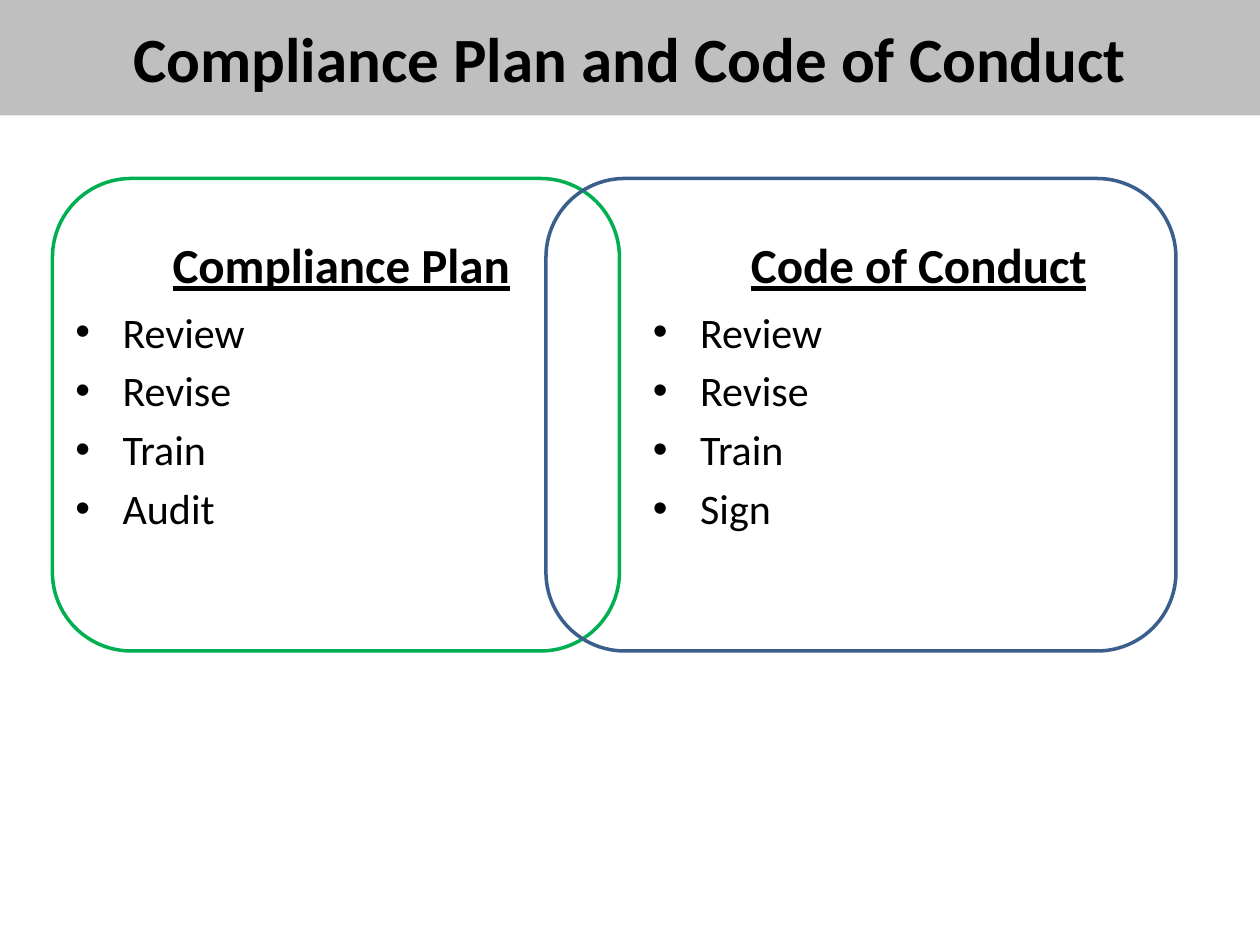
import pptx
import pptx.dml.color
import pptx.enum.shapes
import pptx.enum.text
import pptx.oxml.ns
import pptx.util
from lxml import etree

Pt = pptx.util.Pt
RGBColor = pptx.dml.color.RGBColor
ALIGN = pptx.enum.text.PP_ALIGN
ANCHOR = pptx.enum.text.MSO_ANCHOR
SHAPE = pptx.enum.shapes.MSO_SHAPE

BLACK = RGBColor(0x00, 0x00, 0x00)
GREY = RGBColor(0xBF, 0xBF, 0xBF)
GREEN = RGBColor(0x00, 0xB0, 0x50)
BLUE = RGBColor(0x3A, 0x5F, 0x8C)
HANG = Pt(27)


def write(box, text, size, bold=False, underline=False, bullet=False,
          align=ALIGN.LEFT, anchor=ANCHOR.TOP, space=0):
    """Fill the box with one paragraph for each line of text."""
    frame = box.text_frame
    frame.word_wrap = True
    frame.vertical_anchor = anchor
    for number, line in enumerate(text.split("\n")):
        para = frame.add_paragraph() if number else frame.paragraphs[0]
        para.alignment = align
        para.space_before = Pt(space)
        span = para.add_run()
        span.text = line
        span.font.name = "Calibri"
        span.font.size = Pt(size)
        span.font.bold = bold
        span.font.underline = underline
        span.font.color.rgb = BLACK
        if bullet:
            properties = para._p.get_or_add_pPr()
            properties.set("marL", str(HANG))
            properties.set("indent", str(-HANG))
            font = etree.SubElement(properties, pptx.oxml.ns.qn("a:buFont"))
            font.set("typeface", "Arial")
            mark = etree.SubElement(properties, pptx.oxml.ns.qn("a:buChar"))
            mark.set("char", "•")


deck = pptx.Presentation()
deck.slide_width, deck.slide_height = Pt(720), Pt(540)
page = deck.slides.add_slide(deck.slide_layouts[6])

# Title band
band = page.shapes.add_shape(SHAPE.RECTANGLE, 0, 0, Pt(720), Pt(66))
band.shadow.inherit = False
band.fill.solid()
band.fill.fore_color.rgb = GREY
band.line.fill.background()
write(band, "Compliance Plan and Code of Conduct", 36, bold=True,
      align=ALIGN.CENTER, anchor=ANCHOR.MIDDLE)

# Two columns, each a heading above a bullet list
columns = [
    (36, "Compliance Plan", "Review\nRevise\nTrain\nAudit"),
    (366, "Code of Conduct", "Review\nRevise\nTrain\nSign"),
]
for left, heading, steps in columns:
    heading_box = page.shapes.add_textbox(Pt(left), Pt(121), Pt(318), Pt(50.4))
    write(heading_box, heading, 28, bold=True, underline=True,
          align=ALIGN.CENTER, anchor=ANCHOR.BOTTOM, space=5.6)
    steps_box = page.shapes.add_textbox(Pt(left), Pt(171.4), Pt(318), Pt(311))
    write(steps_box, steps, 24, bullet=True, space=4.8)

# Overlapping outlines around the columns
for left, width, color in [(30, 324, GREEN), (312, 360, BLUE)]:
    outline = page.shapes.add_shape(
        SHAPE.ROUNDED_RECTANGLE, Pt(left), Pt(102), Pt(width), Pt(270))
    outline.shadow.inherit = False
    outline.fill.background()
    outline.line.color.rgb = color
    outline.line.width = Pt(2)

deck.save("out.pptx")
